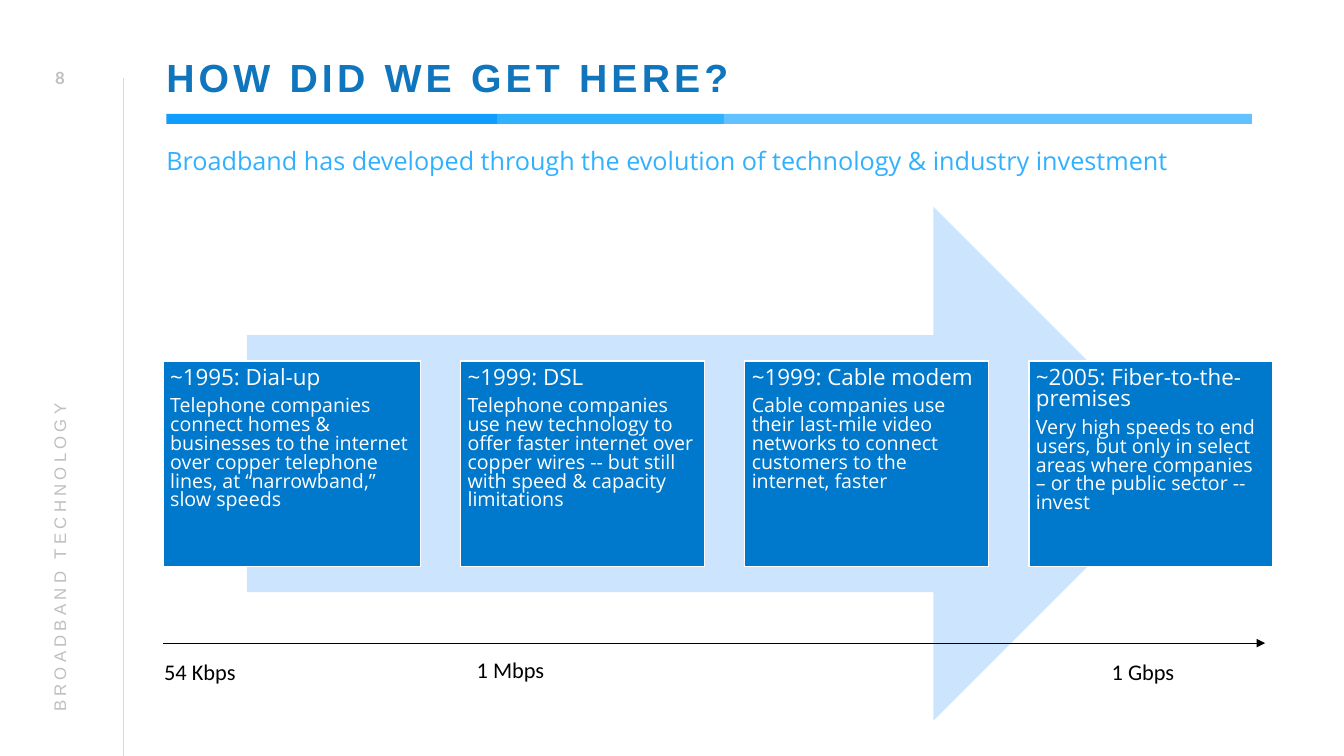
from lxml import etree
from pptx import Presentation
from pptx.dml.color import RGBColor
from pptx.enum.shapes import MSO_CONNECTOR, MSO_SHAPE
from pptx.enum.text import MSO_ANCHOR, MSO_AUTO_SIZE, PP_ALIGN
from pptx.oxml.ns import qn
from pptx.util import Pt

RECT, RIGHT_ARROW = MSO_SHAPE.RECTANGLE, MSO_SHAPE.RIGHT_ARROW
STRAIGHT = MSO_CONNECTOR.STRAIGHT
TOP, MIDDLE = MSO_ANCHOR.TOP, MSO_ANCHOR.MIDDLE
LEFT, CENTER = PP_ALIGN.LEFT, PP_ALIGN.CENTER
NO_FIT = MSO_AUTO_SIZE.NONE

COLORS = {
    "title": "0F75BC", "subtitle": "30B1FF", "side": "BFBFBF", "rule": "D9D9D9",
    "bar1": "119DFF", "bar2": "31B2FF", "bar3": "62C1FF",
    "arrow": "CDE4FF", "box": "0078CB", "white": "FFFFFF", "black": "000000",
}
HEADING, BODY, LABEL, NUMBER = "Arial", "Open Sans", "Calibri", "Lato"

BARS = [("bar1", 236.2), ("bar2", 162), ("bar3", 377.3)]
STAGES = [
    (183.6, "~1995: Dial-up",
     "Telephone companies connect homes & businesses to the internet over copper "
     "telephone lines, at “narrowband,” slow speeds"),
    (174.2, "~1999: DSL",
     "Telephone companies use new technology to offer faster internet over copper "
     "wires -- but still with speed & capacity limitations"),
    (174.2, "~1999: Cable modem",
     "Cable companies use their last-mile video networks to connect customers to "
     "the internet, faster"),
    (174.2, "~2005: Fiber-to-the-premises",
     "Very high speeds to end users, but only in select areas where companies "
     "– or the public sector -- invest"),
]
STAGE_GAP = 28.8
SPEEDS = [("54 Kbps", 110.2, 466.6, 66), ("1 Mbps", 333.4, 465.1, 63),
          ("1 Gbps", 787, 466.6, 60)]


class SlideBuilder:
    """Holds the colours and the slide being drawn; lengths are points."""

    def __init__(self, prs, colors):
        self.s = prs.slides.add_slide(prs.slide_layouts[5])
        self.colors = colors

    def color(self, name):
        return RGBColor.from_string(self.colors[name])

    def run(self, p, text, size, font, color, bold=False, spacing=0):
        r = p.add_run()
        r.text = text
        r.font.size, r.font.name, r.font.bold = Pt(size), font, bold
        r.font.color.rgb = self.color(color)
        if spacing:
            r.font._element.set("spc", str(spacing * 100))

    def frame(self, sp, insets, anchor, wrap=True):
        tf = sp.text_frame
        tf.auto_size, tf.word_wrap, tf.vertical_anchor = NO_FIT, wrap, anchor
        (tf.margin_left, tf.margin_top,
         tf.margin_right, tf.margin_bottom) = map(Pt, insets)
        return tf

    def title(self, text, x, y, w, h):
        sp = self.s.shapes.title
        sp.left, sp.top, sp.width, sp.height = map(Pt, (x, y, w, h))
        p = self.frame(sp, (0, 3.6, 0, 0), MIDDLE).paragraphs[0]
        p.alignment, p.line_spacing = LEFT, 0.9
        self.run(p, text, 28, HEADING, "title", bold=True, spacing=3)

    def text(self, text, x, y, w, h, size, font, color, align=LEFT, anchor=TOP,
             insets=(7.2, 3.6, 7.2, 3.6), wrap=True, rotation=0, **style):
        sp = self.s.shapes.add_textbox(*map(Pt, (x, y, w, h)))
        sp.rotation = rotation
        p = self.frame(sp, insets, anchor, wrap).paragraphs[0]
        p.alignment = align
        self.run(p, text, size, font, color, **style)

    def shape(self, kind, x, y, w, h, fill, line=None):
        sp = self.s.shapes.add_shape(kind, *map(Pt, (x, y, w, h)))
        sp.shadow.inherit = False
        sp.fill.solid()
        sp.fill.fore_color.rgb = self.color(fill)
        if line:
            sp.line.color.rgb = self.color(line)
            sp.line.width = Pt(1)
        else:
            sp.line.fill.background()
        return sp

    def stage(self, x, y, w, h, heading, detail):
        sp = self.shape(RECT, x, y, w, h, "box", "white")
        tf = self.frame(sp, (5, 5, 5, 5), TOP)
        for p, text, size in ((tf.paragraphs[0], heading, 16),
                              (tf.add_paragraph(), detail, 14)):
            p.alignment, p.line_spacing, p.space_after = LEFT, 0.8, Pt(6)
            self.run(p, text, size, BODY, "white")

    def line(self, x1, y1, x2, y2, color, arrow=False):
        cx = self.s.shapes.add_connector(STRAIGHT, *map(Pt, (x1, y1, x2, y2)))
        cx.line.color.rgb = self.color(color)
        cx.line.width = Pt(0.5)
        if arrow:
            ln = cx.line._get_or_add_ln()
            etree.SubElement(ln, qn("a:tailEnd"), type="triangle")
        etree.SubElement(cx._element.spPr, qn("a:effectLst"))


def main():
    prs = Presentation()
    prs.slide_width, prs.slide_height = Pt(960), Pt(540)
    slide = SlideBuilder(prs, COLORS)

    slide.line(88.2, 540, 88.2, 55.4, "rule")
    x = 118.8
    for color, width in BARS:
        slide.shape(RECT, x, 81.4, width, 7.2, color)
        x += width
    slide.title("HOW DID WE GET HERE?", 118.8, 28.8, 775, 53.3)
    slide.text("BROADBAND TECHNOLOGY", -174.2, 284.4, 433.4, 28.8, 12, HEADING,
               "side", anchor=MIDDLE, rotation=270, spacing=3)
    slide.text("8", 19.4, 41, 46.8, 28.8, 12, NUMBER, "side", CENTER, MIDDLE,
               bold=True)

    slide.shape(RIGHT_ARROW, 176.4, 147.6, 673.9, 367.2, "arrow")
    x = 116.6
    for width, heading, detail in STAGES:
        slide.stage(x, 257.8, width, 146.9, heading, detail)
        x += width + STAGE_GAP

    slide.line(116.6, 459.4, 903.6, 459.4, "black", arrow=True)
    for speed, x, y, width in SPEEDS:
        slide.text(speed, x, y, width, 26.6, 16, LABEL, "black", wrap=False)
    slide.text("Broadband has developed through the evolution of technology "
               "& industry investment", 118.8, 100, 775, 28.8, 18, BODY,
               "subtitle", insets=(0, 3.6, 7.2, 3.6))

    prs.save("out.pptx")


if __name__ == "__main__":
    main()
